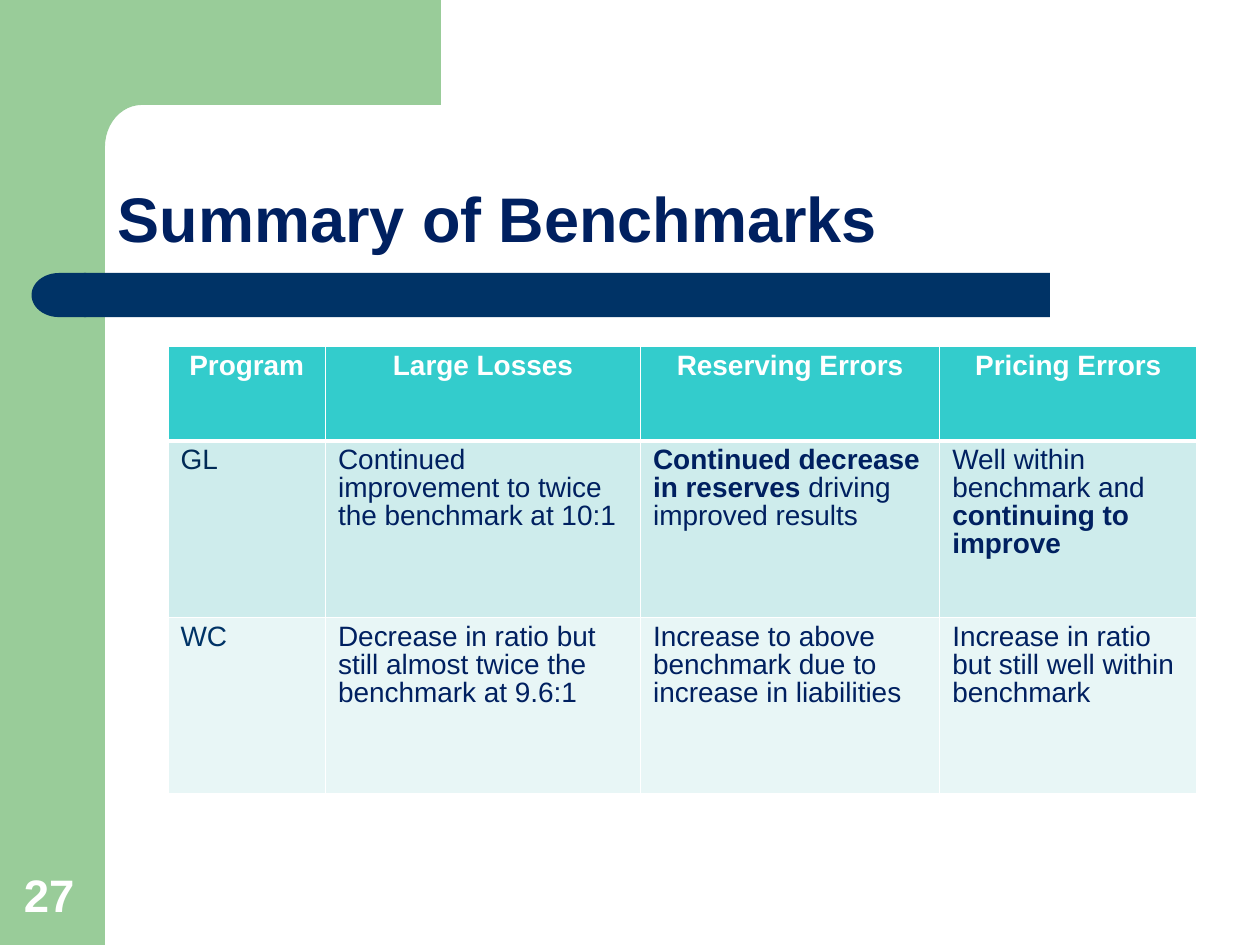
from math import cos, pi, sin

from lxml.etree import SubElement
from pptx import Presentation
from pptx.dml.color import RGBColor as Rgb
from pptx.enum.shapes import MSO_SHAPE as Kind
from pptx.enum.text import MSO_ANCHOR as Anchor, MSO_AUTO_SIZE as Auto, PP_ALIGN as Align
from pptx.oxml.ns import qn
from pptx.util import Inches, Pt

COLORS = {
    "green": "99CC99", "navy": "003366", "ink": "002060", "deep": "002A56",
    "white": "FFFFFF", "teal": "33CCCC", "mint": "CEECEC", "pale": "E8F6F6",
}
FONT = "Arial"

# Table text: a cell is a list of (text, bold) runs
HEADS = ["Program", "Large Losses", "Reserving Errors", "Pricing Errors"]
ROWS = [
    [[(head, True)] for head in HEADS],
    [
        [("GL", False)],
        [("Continued improvement to twice the benchmark at 10:1", False)],
        [("Continued decrease in reserves ", True), ("driving improved results", False)],
        [("Well within benchmark and ", False), ("continuing to improve", True)],
    ],
    [
        [("WC", False)],
        [("Decrease in ratio but still almost twice the benchmark at 9.6:1", False)],
        [("Increase to above benchmark due to increase in liabilities", False)],
        [("Increase in ratio but still well within benchmark", False)],
    ],
]
FILLS = ["teal", "mint", "pale"]
LABELS = ["white", "deep", "navy"]


def unit(n):
    """Length of n grid steps; the slide is 120 columns by 90 rows."""
    return Inches(n / 12)


def color(name):
    return Rgb.from_string(COLORS[name])


class Deck:
    def __init__(self):
        self.prs = Presentation()
        self.prs.slide_width, self.prs.slide_height = unit(120), unit(90)
        self.slide = self.prs.slides.add_slide(self.prs.slide_layouts[5])
        self.shapes = self.slide.shapes

    def paint(self, shape, fill):
        shape.shadow.inherit = False
        shape.fill.solid()
        shape.fill.fore_color.rgb = color(fill)
        shape.line.fill.background()

    def block(self, kind, box, fill):
        shape = self.shapes.add_shape(kind, *map(unit, box))
        self.paint(shape, fill)
        return shape

    def outline(self, points, fill):
        first, *rest = [(unit(x), unit(y)) for x, y in points]
        form = self.shapes.build_freeform(*first)
        form.add_line_segments(rest, close=True)
        self.paint(form.convert_to_shape(), fill)

    def style(self, para, size, ink, bold=None):
        font = para.font
        font.name, font.size, font.bold = FONT, Pt(size), bold
        font.color.rgb = color(ink)

    def words(self, shape, text, size, ink):
        frame = shape.text_frame
        frame.text = text
        frame.word_wrap = True
        frame.auto_size = Auto.NONE
        frame.vertical_anchor = Anchor.BOTTOM
        para = frame.paragraphs[0]
        para.alignment = Align.LEFT
        self.style(para, size, ink, True)
        return para

    def title(self, text, box):
        shape = self.shapes.title
        shape.left, shape.top, shape.width, shape.height = map(unit, box)
        self.words(shape, text, 36, "ink").line_spacing = 0.9

    def label(self, text, box, size, ink):
        self.words(self.shapes.add_textbox(*map(unit, box)), text, size, ink)

    def border(self, cell, top, bottom):
        props = cell._tc.get_or_add_tcPr()
        sides = {"lnL": 1, "lnR": 1, "lnT": top, "lnB": bottom}
        for i, (side, width) in enumerate(sides.items()):
            line = SubElement(props, qn(f"a:{side}"), w=str(Pt(width)))
            fill = SubElement(line, qn("a:solidFill"))
            SubElement(fill, qn("a:srgbClr"), val=COLORS["white"])
            props.insert(i, line)

    def cell(self, cell, runs, fill, ink, head):
        cell.fill.solid()
        cell.fill.fore_color.rgb = color(fill)
        para = cell.text_frame.paragraphs[0]
        para.line_spacing, para.space_before = 0.9, Pt(3)
        para.alignment = Align.CENTER if head else Align.LEFT
        self.style(para, 16, ink)
        for text, bold in runs:
            run = para.add_run()
            run.text, run.font.bold = text, bold

    def table(self, left, top, cols, rows):
        box = left, top, sum(cols), sum(rows)
        grid = self.shapes.add_table(len(rows), len(cols), *map(unit, box)).table
        for col, width in zip(grid.columns, cols):
            col.width = unit(width)
        for r, height in enumerate(rows):
            grid.rows[r].height = unit(height)
            for c, runs in enumerate(ROWS[r]):
                ink = LABELS[r] if r == 0 or c == 0 else "ink"
                cell = grid.cell(r, c)
                self.cell(cell, runs, FILLS[r], ink, r == 0)
                self.border(cell, 3 if r == 1 else 1, 3 if r == 0 else 1)


def main():
    deck = Deck()

    # Green side band and top corner with a rounded inner edge
    deck.block(Kind.RECTANGLE, (0, 0, 10, 90), "green")
    turns = [i * pi / 24 for i in range(13)]
    curve = [(13.5 - 3.5 * sin(t), 14 - 4 * cos(t)) for t in turns]
    deck.outline([(6, 0), (42, 0), (42, 10), *curve, (10, 15.4), (6, 15.4)], "green")

    # Navy bar with a round left end
    deck.block(Kind.RECTANGLE, (8, 26, 92, 4.2), "navy")
    deck.block(Kind.FLOWCHART_DELAY, (3, 26, 5.2, 4.2), "navy").rotation = 180

    # Title, table and page number
    deck.title("Summary of Benchmarks", (10, 10, 104, 15))
    deck.table(16, 33, [15, 30, 28.5, 24.5], [9, 16.8, 16.8])
    deck.label("27", (1.1, 82, 7.7, 6.4), 26, "white")

    deck.prs.save("out.pptx")


if __name__ == "__main__":
    main()
